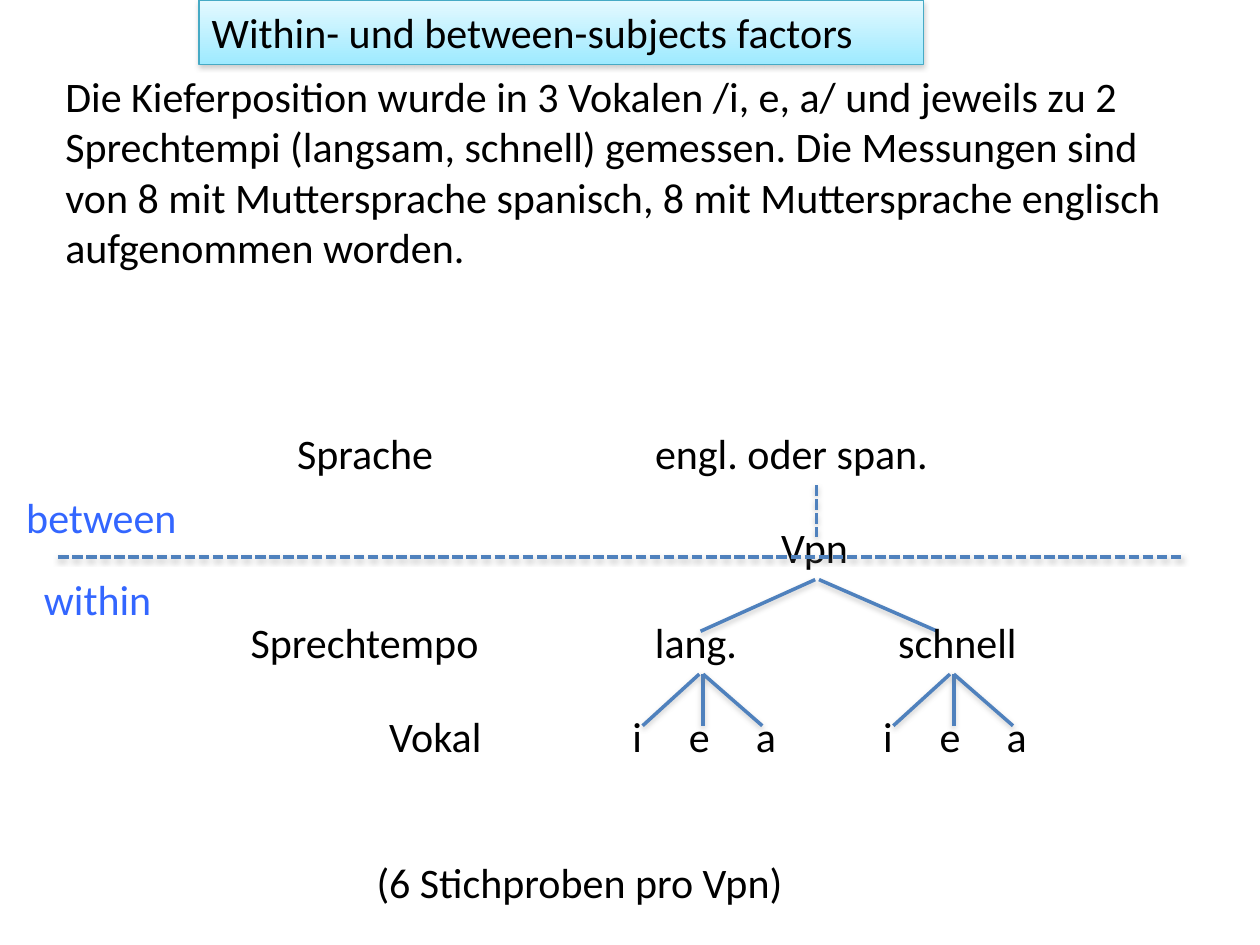
from dataclasses import dataclass

from lxml.etree import SubElement
from pptx import Presentation
from pptx.dml.color import RGBColor
from pptx.enum.dml import MSO_LINE
from pptx.enum.shapes import MSO_CONNECTOR
from pptx.enum.text import MSO_ANCHOR, MSO_AUTO_SIZE, PP_ALIGN
from pptx.oxml.ns import qn
from pptx.util import Inches, Pt


@dataclass(frozen=True)
class Theme:
    font: str = "Calibri"
    text_size: float = 24
    line_width: float = 2
    border_width: float = 0.75
    text: str = "000000"
    accent: str = "3366FF"
    line: str = "4F81BD"
    border: str = "46AAC5"
    gradient: tuple = ("E4F9FF", "9EEAFF")
    shadow: str = "808080"


THEME = Theme()
LABEL_HEIGHT = 0.5


def set_attributes(target, values):
    for name, value in values.items():
        setattr(target, name, value)


def add_shadow(shape):
    effects = SubElement(shape._element.spPr, qn("a:effectLst"))
    shadow = SubElement(effects, qn("a:outerShdw"), {
        "blurRad": str(Pt(3.1)), "dist": str(Pt(1.6)),
        "dir": "5400000", "rotWithShape": "0"})
    color = SubElement(shadow, qn("a:srgbClr"), val=THEME.shadow)
    SubElement(color, qn("a:alpha"), val="38000")


def write_text(shape, text, color=THEME.text, wrap=True,
               auto_size=MSO_AUTO_SIZE.SHAPE_TO_FIT_TEXT):
    set_attributes(shape.text_frame, {
        "text": text, "word_wrap": wrap, "vertical_anchor": MSO_ANCHOR.TOP,
        "auto_size": auto_size})
    paragraph = shape.text_frame.paragraphs[0]
    paragraph.alignment = PP_ALIGN.LEFT
    for font in (paragraph.font, paragraph.runs[0].font):
        set_attributes(font, {"name": THEME.font, "size": Pt(THEME.text_size)})
        font.color.rgb = RGBColor.from_string(color)


def add_text(slide, box, text, color=THEME.text, wrap=False):
    shape = slide.shapes.add_textbox(*map(Inches, box))
    write_text(shape, text, color, wrap)


def add_line(slide, start, end, dashed=False):
    connector = slide.shapes.add_connector(
        MSO_CONNECTOR.STRAIGHT, *map(Inches, (*start, *end)))
    connector.line.color.rgb = RGBColor.from_string(THEME.line)
    connector.line.width = Pt(THEME.line_width)
    if dashed:
        connector.line.dash_style = MSO_LINE.SQUARE_DOT
    add_shadow(connector)


def add_title(slide, box):
    title = slide.shapes.title
    left, top, width, height = map(Inches, box)
    set_attributes(title, {
        "left": left, "top": top, "width": width, "height": height})
    write_text(title, "Within- und between-subjects factors",
               auto_size=MSO_AUTO_SIZE.NONE)
    title.fill.gradient()
    title.fill.gradient_angle = 270
    for stop, color in zip(title.fill.gradient_stops, THEME.gradient):
        stop.color.rgb = RGBColor.from_string(color)
    title.line.color.rgb = RGBColor.from_string(THEME.border)
    title.line.width = Pt(THEME.border_width)
    add_shadow(title)


def add_factor_names(slide, box):
    left, top, width, height = box
    row_gap = (height - LABEL_HEIGHT) / 3
    names = (("Sprache", 0.37, 1.3, 0), ("Sprechtempo", 0, 2.04, 2),
             ("Vokal", 1.1, 0.96, 3))
    for name, offset, label_width, row in names:
        label_box = (left + offset, top + row * row_gap, label_width, LABEL_HEIGHT)
        add_text(slide, label_box, name)


def add_vowels(slide, box):
    left, top, width, height = box
    apex = left + 0.66
    vowels = (("i", 0, 0.28, 0.18, -0.03), ("e", 0.45, 0.37, 0.66, 0),
              ("a", 0.98, 0.36, 1.13, 0))
    for vowel, offset, label_width, line_end, shift in vowels:
        add_line(slide, (apex + shift, top), (left + line_end, top + 0.41))
        add_text(slide, (left + offset, top + height - LABEL_HEIGHT,
                         label_width, LABEL_HEIGHT), vowel)


def add_tree(slide, box):
    left, top, width, height = box
    center = left + 1.56
    row_gap = (height - LABEL_HEIGHT) / 3
    add_text(slide, (left + 0.18, top, 2.79, LABEL_HEIGHT),
             "engl. oder span.", wrap=True)
    add_text(slide, (left + 1.18, top + row_gap, 0.75, LABEL_HEIGHT), "Vpn")
    add_line(slide, (center, top + 0.51), (center, top + 0.92), dashed=True)
    tempos = (("lang.", 0.18, 0.86, 0.64, -0.01),
              ("schnell", 2.11, 1.15, 2.52, 0.02))
    for index, (tempo, offset, label_width, line_end, shift) in enumerate(tempos):
        add_line(slide, (center + shift, top + 1.26), (left + line_end, top + 1.67))
        add_text(slide, (left + offset, top + 2 * row_gap,
                         label_width, LABEL_HEIGHT), tempo)
        add_vowels(slide, (left + 1.99 * index, top + 2.01, 1.34, height - 2.01))


def add_divider(slide, box):
    left, top, width, height = box
    line_top = top + 0.57
    add_text(slide, (left, top, 1.41, LABEL_HEIGHT), "between", THEME.accent)
    add_text(slide, (left + 0.14, top + 0.65, 1.08, LABEL_HEIGHT),
             "within", THEME.accent)
    add_line(slide, (left + 0.35, line_top), (left + width, line_top), dashed=True)


def main():
    presentation = Presentation()
    set_attributes(presentation, {
        "slide_width": Inches(10), "slide_height": Inches(7.5)})
    slide = presentation.slides.add_slide(presentation.slide_layouts[5])
    add_title(slide, (1.58, 0, 5.75, 0.51))
    add_text(slide, (0.42, 0.51, 9.25, 1.72),
             "Die Kieferposition wurde in 3 Vokalen /i, e, a/ und jeweils zu 2 "
             "Sprechtempi (langsam, schnell) gemessen. Die Messungen sind von "
             "8 mit Muttersprache spanisch, 8 mit Muttersprache englisch "
             "aufgenommen worden.", wrap=True)
    add_factor_names(slide, (1.89, 3.34, 2.06, 2.75))
    add_tree(slide, (4.92, 3.34, 3.33, 2.75))
    add_divider(slide, (0.11, 3.85, 9.27, 1.15))
    add_text(slide, (2.89, 6.75, 3.5, LABEL_HEIGHT),
             "(6 Stichproben pro Vpn)", wrap=True)
    presentation.save("out.pptx")


if __name__ == "__main__":
    main()
